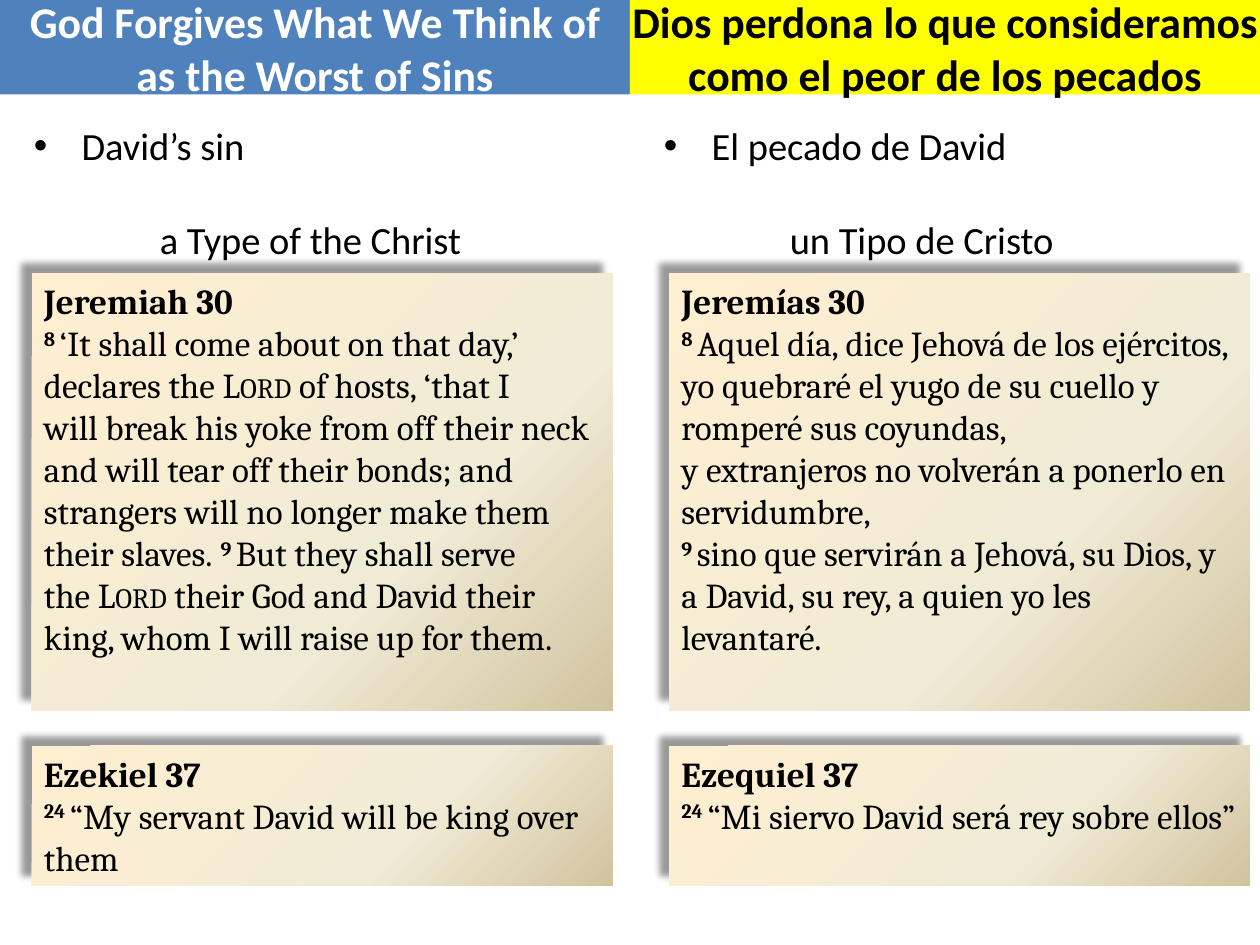
from lxml.etree import SubElement
from pptx import Presentation
from pptx.dml.color import RGBColor
from pptx.enum.shapes import MSO_SHAPE
from pptx.enum.text import MSO_ANCHOR, PP_ALIGN
from pptx.oxml.ns import qn
from pptx.util import Inches, Pt

BLACK = RGBColor(0x00, 0x00, 0x00)
WHITE = RGBColor(0xFF, 0xFF, 0xFF)
BLUE = RGBColor(0x4F, 0x81, 0xBD)
YELLOW = RGBColor(0xFF, 0xFF, 0x00)
PARCHMENT = [(0, RGBColor(0xFF, 0xEF, 0xD1)), (65, RGBColor(0xF0, 0xEB, 0xD5)),
             (100, RGBColor(0xD1, 0xC3, 0x9F))]

COLUMN = 5
CARD_WIDTH = 4.61
CARD_ROWS = [(2.17, 3.47), (5.92, 1.11)]  # top, height
NO_BREAK_SPACE = chr(160)  # written as ~ in the verses

# Each card is a list of paragraphs, each paragraph a list of (style, text).
ENGLISH = {
    "title": "God Forgives What We Think of as the Worst of Sins",
    "title_fill": BLUE, "title_color": WHITE, "title_inset": 0.1,
    "points": ["David’s sin", "a Type of the Christ"],
    "points_width": 4.83, "card_offset": 0.25,
    "cards": [
        [[("bold", "Jeremiah 30")],
         [("verse", "8~"),
          ("plain", "‘It shall come about on that day,’ declares the~"),
          ("small", "Lord"),
          ("plain", "~of hosts, ‘that I will~break his yoke from off~their neck and will "
                    "tear off~their~bonds; and strangers will no longer make them "
                    "their slaves.~"),
          ("verse", "9~"), ("plain", "But they shall serve the~"), ("small", "Lord"),
          ("plain", "~their God and David their king, whom I will raise up for them.")]],
        [[("bold", "Ezekiel 37")],
         [("verse", "24~"), ("plain", "“My servant~David will be king over them")]],
    ],
}
SPANISH = {
    "title": "Dios perdona lo que consideramos como el peor de los pecados",
    "title_fill": YELLOW, "title_color": BLACK, "title_inset": 0,
    "points": ["El pecado de David", "un Tipo de Cristo"],
    "points_width": 4.67, "card_offset": 0.31,
    "cards": [
        [[("bold", "Jeremías 30\n"), ("verse", "8~"),
          ("plain", "Aquel día, dice Jehová de los ejércitos,\n"
                    "yo quebraré el yugo de su cuello y romperé sus coyundas,\n"
                    "y extranjeros no volverán a ponerlo en servidumbre,\n"),
          ("verse", "9~"),
          ("plain", "sino que servirán a Jehová, su Dios, y a David, su rey, "
                    "a quien yo les levantaré.")]],
        [[("bold", "Ezequiel 37\n"), ("verse", "24~"),
          ("plain", "“Mi siervo David será rey sobre ellos”")]],
    ],
}


def style_card(card):
    """Give the card a diagonal parchment gradient and a soft shadow up and to the left."""
    card.line.fill.background()
    card.shadow.inherit = False
    card.fill.gradient()
    gradient = card._element.spPr.find(qn("a:gradFill"))
    for child in list(gradient):
        gradient.remove(child)
    stops = SubElement(gradient, qn("a:gsLst"))
    for percent, color in PARCHMENT:
        stop = SubElement(stops, qn("a:gs"), pos=str(percent * 1000))
        SubElement(stop, qn("a:srgbClr"), val=str(color))
    SubElement(gradient, qn("a:lin"), ang=str(45 * 60000), scaled="0")
    effects = card._element.spPr.find(qn("a:effectLst"))
    shadow = SubElement(effects, qn("a:outerShdw"), blurRad=str(Pt(4)), dist=str(Pt(8)),
                        dir=str(225 * 60000), algn="br", rotWithShape="0")
    shadow_color = SubElement(shadow, qn("a:srgbClr"), val=str(BLACK))
    SubElement(shadow_color, qn("a:alpha"), val="40000")


def write_spans(para, spans):
    for style, text in spans:
        for index, line in enumerate(text.replace("~", NO_BREAK_SPACE).split("\n")):
            if index:
                para.add_line_break()
            if not line:
                continue
            span = para.add_run()
            span.text = line
            span.font.bold = style in ("bold", "verse")
            properties = span.font._element
            if style == "verse":
                properties.set("baseline", "30000")
            if style == "small":
                properties.set("cap", "small")


deck = Presentation()
deck.slide_width, deck.slide_height = Inches(2 * COLUMN), Inches(7.5)
page = deck.slides.add_slide(deck.slide_layouts[6])

for number, language in enumerate([ENGLISH, SPANISH]):
    left = number * COLUMN

    banner = page.shapes.add_shape(MSO_SHAPE.RECTANGLE, Inches(left), 0,
                                   Inches(COLUMN), Inches(0.75))
    banner.shadow.inherit = False
    banner.line.fill.background()
    banner.fill.solid()
    banner.fill.fore_color.rgb = language["title_fill"]
    frame = banner.text_frame
    frame.word_wrap = True
    frame.vertical_anchor = MSO_ANCHOR.MIDDLE
    frame.margin_left = frame.margin_right = Inches(language["title_inset"])
    para = frame.paragraphs[0]
    para.text = language["title"]
    para.alignment = PP_ALIGN.CENTER
    para.font.name, para.font.size, para.font.bold = "Calibri", Pt(25), True
    para.font.color.rgb = language["title_color"]

    box = page.shapes.add_textbox(Inches(left + 0.17), Inches(0.92),
                                  Inches(language["points_width"]), Inches(1.21))
    frame = box.text_frame
    frame.word_wrap = True
    frame.text = "\n".join(language["points"])
    for para in frame.paragraphs:
        para.font.name, para.font.size = "Calibri", Pt(22)
        para.font.color.rgb = BLACK
    point, detail = [para._p.get_or_add_pPr() for para in frame.paragraphs]
    point.set("marL", str(Inches(0.38)))
    point.set("indent", str(-Inches(0.38)))
    bullet_font = point.makeelement(qn("a:buFont"), {"typeface": "Arial"})
    bullet = point.makeelement(qn("a:buChar"), {"char": "•"})
    point.insert(0, bullet_font)
    point.insert(1, bullet)
    detail.set("marL", str(Inches(1)))
    detail.set("indent", "0")
    frame.paragraphs[1].space_before = Pt(27)

    for (top, height), passage in zip(CARD_ROWS, language["cards"]):
        card = page.shapes.add_shape(
            MSO_SHAPE.RECTANGLE, Inches(left + language["card_offset"]), Inches(top),
            Inches(CARD_WIDTH), Inches(height))
        style_card(card)
        frame = card.text_frame
        frame.word_wrap = True
        frame.vertical_anchor = MSO_ANCHOR.TOP
        for index, spans in enumerate(passage):
            para = frame.add_paragraph() if index else frame.paragraphs[0]
            para.alignment = PP_ALIGN.LEFT
            para.font.name, para.font.size = "Cambria", Pt(20)
            para.font.color.rgb = BLACK
            write_spans(para, spans)

deck.save("out.pptx")
